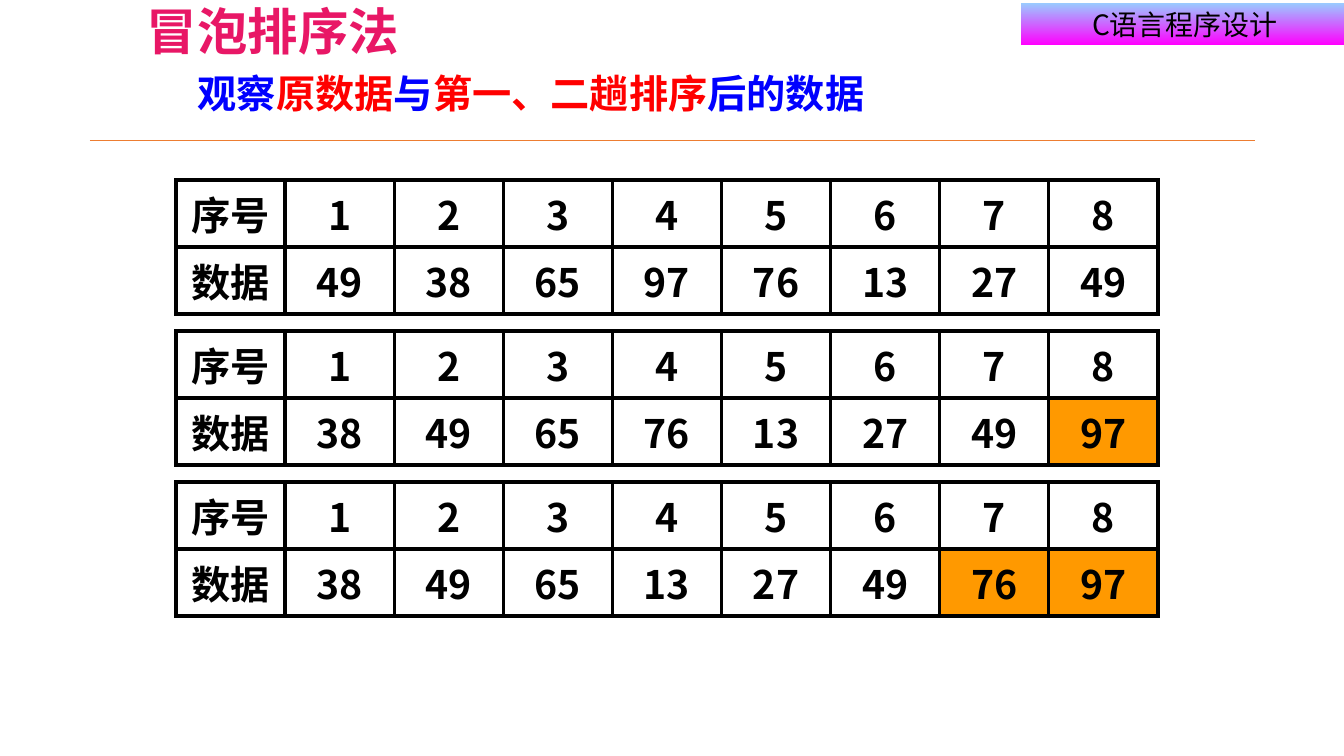
from dataclasses import dataclass

from lxml import etree
from pptx import Presentation
from pptx.dml.color import RGBColor
from pptx.enum.shapes import MSO_CONNECTOR, MSO_SHAPE
from pptx.enum.text import MSO_ANCHOR, PP_ALIGN
from pptx.oxml.ns import qn
from pptx.util import Emu, Pt

CENTER = PP_ALIGN.CENTER
TOP, MIDDLE = MSO_ANCHOR.TOP, MSO_ANCHOR.MIDDLE
RECTANGLE = MSO_SHAPE.RECTANGLE
STRAIGHT = MSO_CONNECTOR.STRAIGHT
EMU_PER_PX = 914400 / 134.4


def px(length):
    return Emu(round(length * EMU_PER_PX))


@dataclass(frozen=True)
class Theme:
    black: str = "000000"
    title: str = "E81766"
    blue: str = "0000FF"
    red: str = "FF0000"
    rule: str = "ED7D31"
    sorted_cell: str = "FF9900"
    banner: tuple = ("99CCFF", "FF00FF")
    body_font: str = "Noto Sans CJK SC"
    title_font: str = "Noto Sans CJK JP"
    subtitle_font: str = "Arial"
    title_size: int = 27
    body_size: int = 21
    banner_size: int = 15
    rule_width: float = 0.25
    border_width: int = 2


class SlideBuilder:
    def __init__(self, slide, theme):
        self.slide = slide
        self.theme = theme

    def add_runs(self, frame, runs, size, font, bold=True):
        """Fill the first paragraph with (text, colour) runs."""
        paragraph = frame.paragraphs[0]
        paragraph.alignment = CENTER
        for text, color in runs:
            run = paragraph.add_run()
            run.text = text
            run.font.size = Pt(size)
            run.font.bold = bold
            run.font.name = font
            run.font.color.rgb = RGBColor.from_string(color)
            properties = run.font._element
            properties.set("lang", "zh-CN")
            etree.SubElement(properties, qn("a:ea"), typeface=font)

    def text(self, left, top, width, height, runs, size, font):
        box = self.slide.shapes.add_textbox(px(left), px(top), px(width), px(height))
        frame = box.text_frame
        frame.word_wrap = False
        frame.vertical_anchor = TOP
        frame.margin_left = frame.margin_right = 0
        frame.margin_top = frame.margin_bottom = 0
        self.add_runs(frame, runs, size, font)

    def banner(self, left, top, width, height, text):
        shape = self.slide.shapes.add_shape(
            RECTANGLE, px(left), px(top), px(width), px(height))
        shape.shadow.inherit = False
        shape.line.fill.background()
        shape.fill.gradient()
        shape.fill.gradient_angle = 270
        for stop, color in zip(shape.fill.gradient_stops, self.theme.banner):
            stop.color.rgb = RGBColor.from_string(color)
        shape.text_frame.vertical_anchor = MIDDLE
        self.add_runs(shape.text_frame, [(text, self.theme.black)],
                      self.theme.banner_size, self.theme.body_font, bold=False)

    def rule(self, left, right, y):
        line = self.slide.shapes.add_connector(
            STRAIGHT, px(left), px(y), px(right), px(y))
        line.line.color.rgb = RGBColor.from_string(self.theme.rule)
        line.line.width = Pt(self.theme.rule_width)
        etree.SubElement(line._element.spPr, qn("a:effectLst"))

    def borders(self, cell):
        properties = cell._tc.get_or_add_tcPr()
        for side in ("a:lnL", "a:lnR", "a:lnT", "a:lnB"):
            line = etree.SubElement(properties, qn(side),
                                    w=str(Pt(self.theme.border_width)))
            fill = etree.SubElement(line, qn("a:solidFill"))
            etree.SubElement(fill, qn("a:srgbClr"), val=self.theme.black)

    def table(self, left, top, width, row_height, rows, sorted_count):
        """Draw a grid; the last sorted_count cells of the bottom row are filled."""
        row_count, column_count = len(rows), len(rows[0])
        table = self.slide.shapes.add_table(
            row_count, column_count, px(left), px(top),
            px(width), px(row_height * row_count)).table
        table.first_row = table.horz_banding = False
        for column in table.columns:
            column.width = px(width / column_count)
        for row_index, values in enumerate(rows):
            table.rows[row_index].height = px(row_height)
            for column_index, value in enumerate(values):
                cell = table.cell(row_index, column_index)
                self.borders(cell)
                cell.vertical_anchor = MIDDLE
                cell.margin_left = cell.margin_right = px(9)
                cell.margin_top = cell.margin_bottom = px(5)
                if (row_index == row_count - 1
                        and column_index >= column_count - sorted_count):
                    cell.fill.solid()
                    cell.fill.fore_color.rgb = RGBColor.from_string(
                        self.theme.sorted_cell)
                else:
                    cell.fill.background()
                self.add_runs(cell.text_frame, [(str(value), self.theme.black)],
                              self.theme.body_size, self.theme.body_font)


def main():
    theme = Theme()
    presentation = Presentation()
    presentation.slide_width, presentation.slide_height = px(1344), px(756)
    slide = presentation.slides.add_slide(presentation.slide_layouts[6])
    builder = SlideBuilder(slide, theme)

    # Header
    builder.banner(1021, 3, 328, 42, "C语言程序设计")
    builder.text(27, 0, 492, 40, [("冒泡排序法", theme.title)],
                 theme.title_size, theme.title_font)
    builder.rule(90, 1255, 140)
    builder.text(179, 69, 704, 60, [
        ("观察", theme.blue),
        ("原数据", theme.red),
        ("与", theme.blue),
        ("第一、二趟排序", theme.red),
        ("后的数据", theme.blue),
    ], theme.body_size, theme.subtitle_font)

    # Data before sorting and after each pass
    passes = [
        [49, 38, 65, 97, 76, 13, 27, 49],
        [38, 49, 65, 76, 13, 27, 49, 97],
        [38, 49, 65, 13, 27, 49, 76, 97],
    ]
    numbers = ["序号", *range(1, 9)]
    for pass_index, data in enumerate(passes):
        builder.table(176, 180 + 151 * pass_index, 982, 67,
                      [numbers, ["数据", *data]], sorted_count=pass_index)

    presentation.save("out.pptx")


if __name__ == "__main__":
    main()
